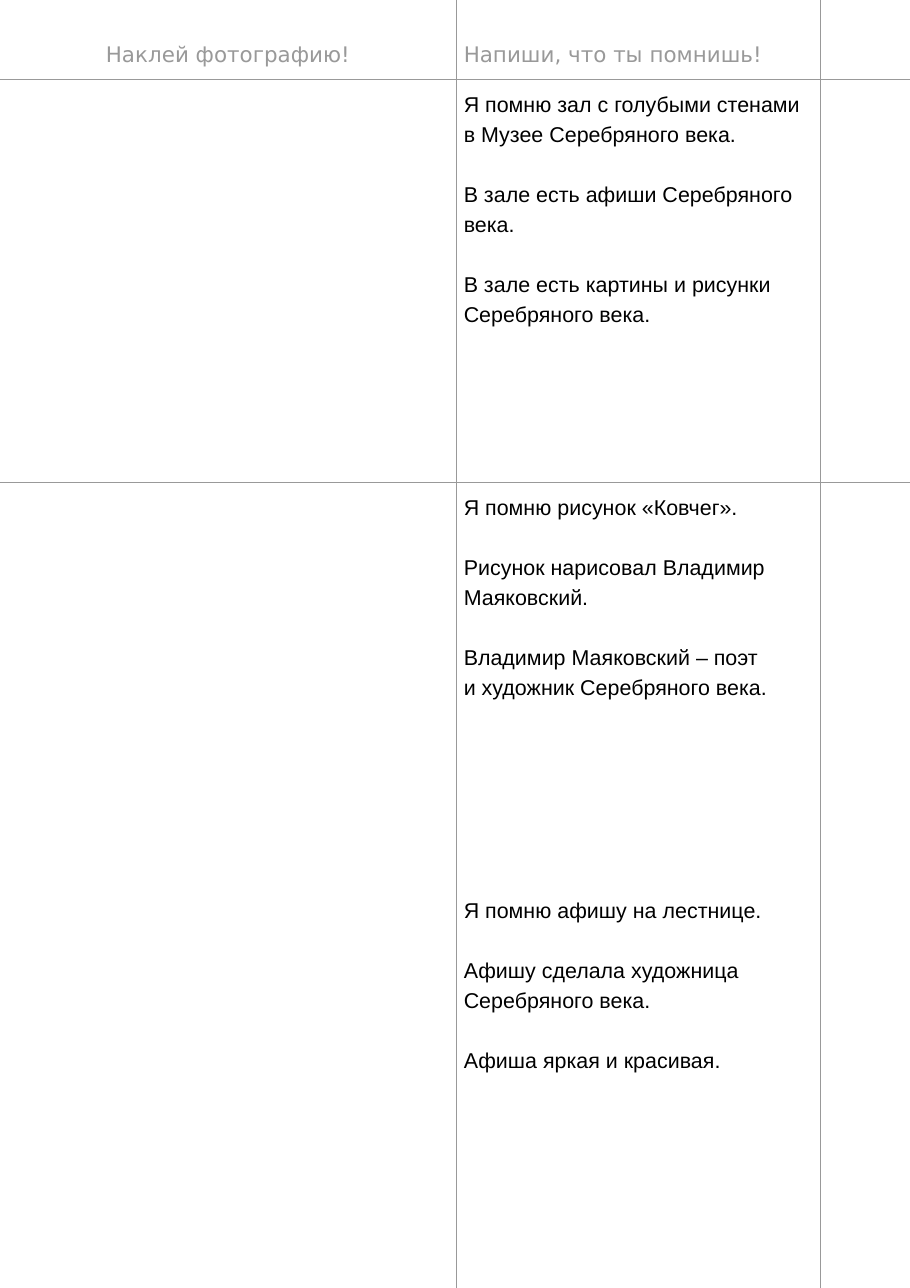
from dataclasses import dataclass

from lxml import etree
from pptx import Presentation
from pptx.dml.color import RGBColor
from pptx.enum.text import PP_ALIGN
from pptx.oxml.ns import qn
from pptx.table import _Cell
from pptx.util import Inches, Pt

LEFT, CENTER = PP_ALIGN.LEFT, PP_ALIGN.CENTER


@dataclass(frozen=True)
class Theme:
    heading_font: str = "DejaVu Sans"
    body_font: str = "Arial"
    grey: str = "999999"
    black: str = "000000"
    white: str = "FFFFFF"
    text_size: float = 14
    line_spacing: float = 19.6
    border_width: float = 0.53
    margin: float = 0.07
    heading_margin: float = 0.34


@dataclass(frozen=True)
class CellText:
    paragraphs: tuple[str, ...]
    heading: bool = False
    alignment: PP_ALIGN = LEFT


THEME = Theme()
COLUMN_WIDTHS = (4.14, 3.31, 0.82)
ROW_HEIGHTS = (0.72, 3.66, 3.66, 3.66)
RULED_ROWS = (0, 1)  # rows with a line below them

# Album page: photographs on the left, memories on the right
CELL_TEXTS = {
    (0, 0): CellText(("Наклей фотографию!",), heading=True, alignment=CENTER),
    (0, 1): CellText(("Напиши, что ты помнишь!",), heading=True),
    (1, 1): CellText((
        "Я помню зал с голубыми стенами в Музее Серебряного века.",
        "В зале есть афиши Серебряного века.",
        "В зале есть картины и рисунки\vСеребряного века.",
    )),
    (2, 1): CellText((
        "Я помню рисунок «Ковчег».",
        "Рисунок нарисовал Владимир Маяковский.",
        "Владимир Маяковский – поэт\vи художник Серебряного века.",
    )),
    (3, 1): CellText((
        "Я помню афишу на лестнице.",
        "Афишу сделала художница Серебряного века.",
        "Афиша яркая и красивая.",
    )),
}


def set_borders(cell: _Cell, row: int, column: int) -> None:
    """Rule the inner column edges and the chosen row edges."""
    visible = {
        "a:lnL": column > 0,
        "a:lnR": column < len(COLUMN_WIDTHS) - 1,
        "a:lnT": row - 1 in RULED_ROWS,
        "a:lnB": row in RULED_ROWS,
    }
    properties = cell._tc.get_or_add_tcPr()
    for tag, shown in visible.items():
        line = etree.SubElement(properties, qn(tag), w=str(int(Pt(THEME.border_width))))
        if shown:
            fill = etree.SubElement(line, qn("a:solidFill"))
            etree.SubElement(fill, qn("a:srgbClr"), val=THEME.grey)
        else:
            etree.SubElement(line, qn("a:noFill"))


def write_text(cell: _Cell, content: CellText) -> None:
    """Write paragraphs separated by one line of space."""
    cell.margin_top = Inches(THEME.heading_margin if content.heading else THEME.margin)
    frame = cell.text_frame
    for index, text in enumerate(content.paragraphs):
        paragraph = frame.add_paragraph() if index else frame.paragraphs[0]
        paragraph.text = text
        paragraph.alignment = content.alignment
        paragraph.line_spacing = Pt(THEME.line_spacing)
        if index:
            paragraph.space_before = Pt(THEME.line_spacing)
        font = paragraph.font
        font.size = Pt(THEME.text_size)
        font.name = THEME.heading_font if content.heading else THEME.body_font
        font.color.rgb = RGBColor.from_string(THEME.grey if content.heading else THEME.black)


def main() -> None:
    presentation = Presentation()
    presentation.slide_width = Inches(8.26)
    presentation.slide_height = Inches(11.69)
    slide = presentation.slides.add_slide(presentation.slide_layouts[6])

    # Table grid
    table = slide.shapes.add_table(
        len(ROW_HEIGHTS), len(COLUMN_WIDTHS), 0, 0,
        Inches(sum(COLUMN_WIDTHS)), Inches(sum(ROW_HEIGHTS)),
    ).table
    table.first_row = False
    table.horz_banding = False
    for column, width in zip(table.columns, COLUMN_WIDTHS):
        column.width = Inches(width)
    for row, height in zip(table.rows, ROW_HEIGHTS):
        row.height = Inches(height)

    # Cells
    for row in range(len(ROW_HEIGHTS)):
        for column in range(len(COLUMN_WIDTHS)):
            cell = table.cell(row, column)
            cell.margin_left = cell.margin_right = Inches(THEME.margin)
            cell.margin_top = cell.margin_bottom = Inches(THEME.margin)
            set_borders(cell, row, column)
            cell.fill.solid()
            cell.fill.fore_color.rgb = RGBColor.from_string(THEME.white)
            if (row, column) in CELL_TEXTS:
                write_text(cell, CELL_TEXTS[row, column])

    presentation.save("out.pptx")


if __name__ == "__main__":
    main()
